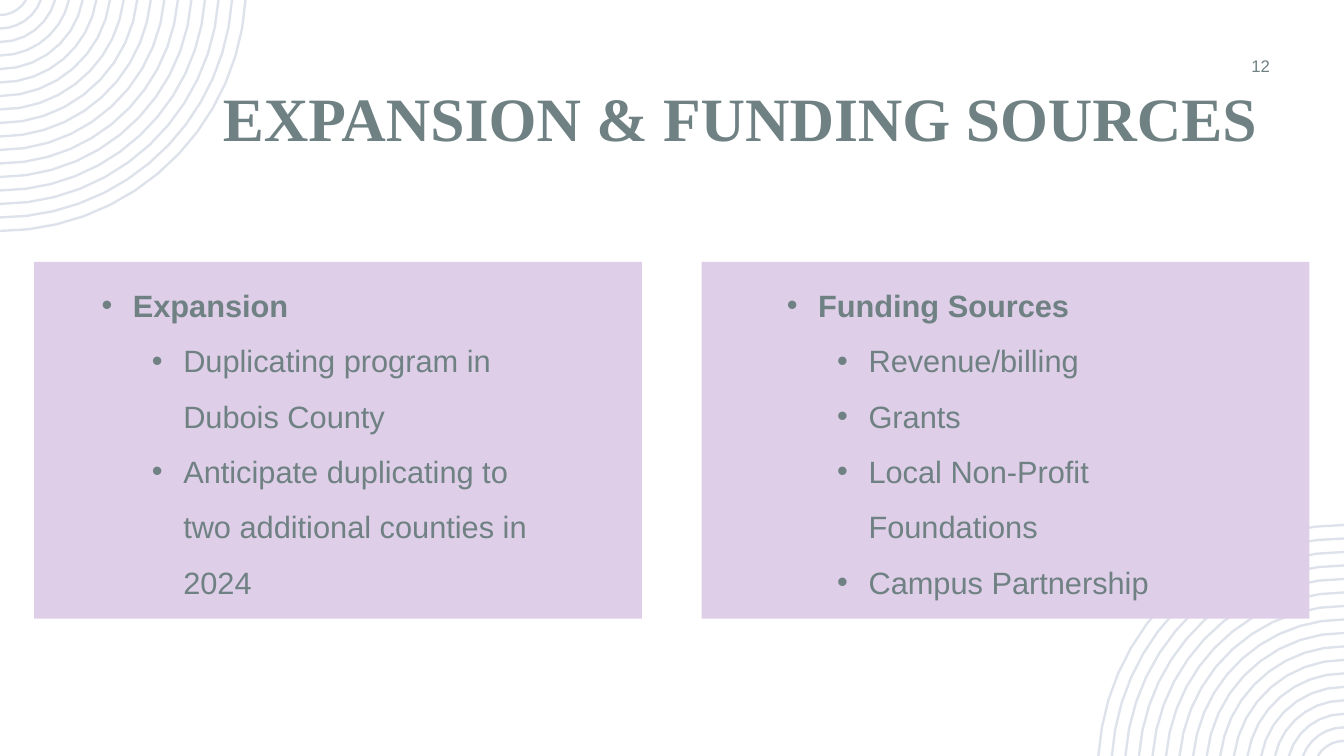
import math
from dataclasses import dataclass

import pptx
import pptx.dml.color
import pptx.enum.shapes
import pptx.enum.text
import pptx.oxml
import pptx.oxml.ns
import pptx.slide
import pptx.text.text
import pptx.util
from pptx.util import Cm

SLATE = pptx.dml.color.RGBColor(0x6F, 0x81, 0x83)
LILAC = pptx.dml.color.RGBColor(0xDE, 0xCE, 0xE8)
MIST = pptx.dml.color.RGBColor(0xDE, 0xE3, 0xEB)

SLIDE_WIDTH = 33.87
SLIDE_HEIGHT = 19.05
RING_COUNT = 17
OUTER_RADIUS = 6.2
RING_STEP = 0.34
RING_THICKNESS = 0.06
CENTER_OFFSET = 0.38


@dataclass(frozen=True)
class Box:
    left: float
    top: float
    width: float
    height: float

    def lengths(self) -> tuple[int, ...]:
        return tuple(Cm(n) for n in (self.left, self.top, self.width, self.height))


@dataclass(frozen=True)
class Topic:
    panel: Box
    body: Box
    heading: str
    points: tuple[str, ...]


TOPICS = (
    Topic(
        Box(0.86, 6.6, 15.32, 8.99),
        Box(2.31, 6.63, 11.51, 8.53),
        "Expansion",
        (
            "Duplicating program in Dubois County",
            "Anticipate duplicating to two additional counties in 2024",
        ),
    ),
    Topic(
        Box(17.68, 6.6, 15.32, 8.99),
        Box(19.58, 6.63, 11.51, 8.53),
        "Funding Sources",
        (
            "Revenue/billing",
            "Grants",
            "Local Non-Profit Foundations",
            "Campus Partnership",
        ),
    ),
)


def arc(radius: float) -> list[tuple[float, float]]:
    steps = 4 + round(1.5 * radius)
    start = math.asin(CENTER_OFFSET / radius)
    sweep = math.pi / 2 - start
    angles = [start + sweep * step / steps for step in range(steps + 1)]
    return [
        (radius * math.cos(angle), radius * math.sin(angle) - CENTER_OFFSET)
        for angle in angles
    ]


def draw_rings(slide: pptx.slide.Slide, opposite: bool) -> None:
    arcs = []
    for ring in range(RING_COUNT):
        curve = arc(OUTER_RADIUS - ring * RING_STEP)
        if opposite:
            curve = [(SLIDE_WIDTH - x, SLIDE_HEIGHT - y) for x, y in curve]
        arcs.append([(Cm(x), Cm(y)) for x, y in curve])
    builder = slide.shapes.build_freeform(*arcs[0][0])
    for curve in arcs:
        builder.move_to(*curve[0])
        builder.add_line_segments(curve[1:], close=False)
    rings = builder.convert_to_shape()
    rings.shadow.inherit = False
    rings.fill.background()
    rings.line.color.rgb = MIST
    rings.line.width = Cm(RING_THICKNESS)


def add_text_frame(slide: pptx.slide.Slide, box: Box) -> pptx.text.text.TextFrame:
    frame = slide.shapes.add_textbox(*box.lengths()).text_frame
    frame.word_wrap = True
    return frame


def write(
    paragraph: pptx.text.text._Paragraph,
    text: str,
    size: int,
    bold: bool = False,
    font_name: str = "Arial",
) -> None:
    paragraph.text = text
    paragraph.font.name = font_name
    paragraph.font.size = pptx.util.Pt(size)
    paragraph.font.bold = bold
    paragraph.font.color.rgb = SLATE


def add_bullet(paragraph: pptx.text.text._Paragraph, indent: float) -> None:
    properties = paragraph._p.get_or_add_pPr()
    properties.set("marL", str(Cm(indent)))
    properties.set("indent", str(-Cm(0.79)))
    namespace = pptx.oxml.ns.nsdecls("a")
    defaults = properties.find(pptx.oxml.ns.qn("a:defRPr"))
    for markup in ('buFont {} typeface="Arial"', 'buChar {} char="•"'):
        defaults.addprevious(
            pptx.oxml.parse_xml("<a:" + markup.format(namespace) + "/>")
        )


def draw_topic(slide: pptx.slide.Slide, topic: Topic) -> None:
    panel = slide.shapes.add_shape(
        pptx.enum.shapes.MSO_SHAPE.RECTANGLE, *topic.panel.lengths()
    )
    panel.shadow.inherit = False
    panel.fill.solid()
    panel.fill.fore_color.rgb = LILAC
    panel.line.fill.background()

    body = add_text_frame(slide, topic.body)
    for index, text in enumerate((topic.heading, *topic.points)):
        is_heading = index == 0
        paragraph = body.paragraphs[0] if is_heading else body.add_paragraph()
        write(paragraph, text, 22, bold=is_heading)
        paragraph.level = 0 if is_heading else 1
        paragraph.line_spacing = 1.5
        add_bullet(paragraph, 0.79 if is_heading else 2.06)


def main() -> None:
    presentation = pptx.Presentation()
    presentation.slide_width = Cm(SLIDE_WIDTH)
    presentation.slide_height = Cm(SLIDE_HEIGHT)
    slide = presentation.slides.add_slide(presentation.slide_layouts[6])

    for opposite in (False, True):
        draw_rings(slide, opposite)

    title = add_text_frame(slide, Box(3.84, 2.03, 29.64, 2.13)).paragraphs[0]
    write(title, "EXPANSION & FUNDING SOURCES", 44, True, "Times New Roman")
    title.alignment = pptx.enum.text.PP_ALIGN.CENTER
    title.line_spacing = pptx.util.Pt(48.8)

    number_frame = add_text_frame(slide, Box(30.4, 1.27, 2.74, 0.76))
    number_frame.vertical_anchor = pptx.enum.text.MSO_ANCHOR.MIDDLE
    page_number = number_frame.paragraphs[0]
    write(page_number, "12", 12)
    page_number.alignment = pptx.enum.text.PP_ALIGN.CENTER

    for topic in TOPICS:
        draw_topic(slide, topic)

    presentation.save("out.pptx")


if __name__ == "__main__":
    main()
